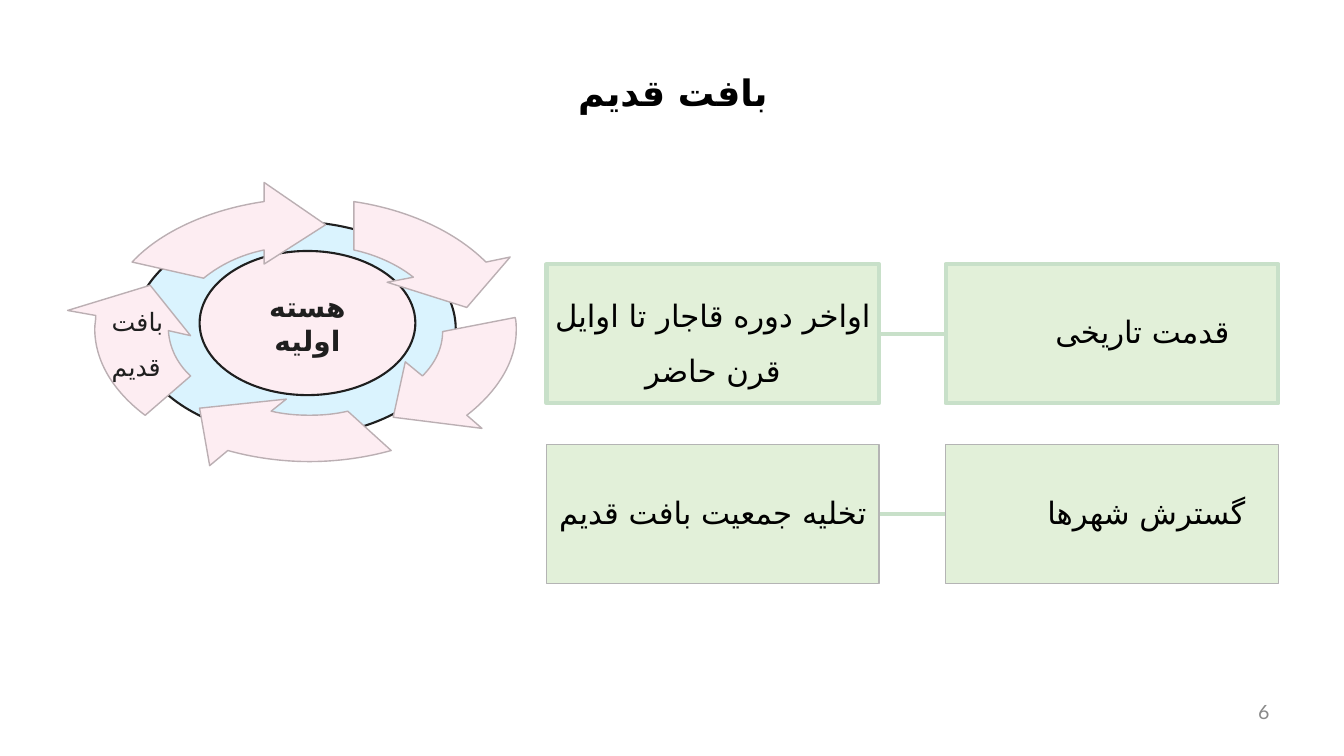
from dataclasses import dataclass

from lxml.etree import SubElement
from pptx import Presentation
from pptx.dml.color import RGBColor
from pptx.enum.shapes import MSO_CONNECTOR, MSO_SHAPE
from pptx.enum.text import MSO_ANCHOR, PP_ALIGN
from pptx.oxml.ns import qn
from pptx.util import Pt

PX = 9144


@dataclass(frozen=True)
class Theme:
    font: str = "Roboto"
    persian_font: str = "DejaVu Sans"
    number_font: str = "Lato"
    black: str = "000000"
    ink: str = "1F1F1F"
    gray: str = "898989"
    green: str = "E2F0D9"
    green_edge: str = "C8E0C9"
    plain_edge: str = "B4B4B4"
    pink: str = "FDEDF2"
    pink_edge: str = "BBAFB3"
    blue: str = "DAF3FE"
    title: int = 26
    card: int = 22
    core: int = 20
    ring: int = 18
    number: int = 14


theme = Theme()


def write(shape, text, size, color, font=theme.font, bold=False, align=PP_ALIGN.CENTER,
          rtl=True, spacing=1.0, after=0, anchor=MSO_ANCHOR.MIDDLE, wrap=True,
          insets=(10, 5, 10, 5)):
    frame = shape.text_frame
    frame.word_wrap = wrap
    frame.vertical_anchor = anchor
    frame.margin_left, frame.margin_top, frame.margin_right, frame.margin_bottom = (
        side * PX for side in insets)
    paragraph = frame.paragraphs[0]
    paragraph.text = text
    paragraph.alignment = align
    paragraph.line_spacing = spacing
    paragraph.space_after = Pt(after)
    if rtl:
        paragraph._p.get_or_add_pPr().set("rtl", "1")
    for run in paragraph.runs:
        run.font.size = Pt(size)
        run.font.bold = bold
        run.font.color.rgb = RGBColor.from_string(color)
        run.font.name = font
        SubElement(run._r.get_or_add_rPr(), qn("a:cs"), typeface=theme.persian_font)


def paint(shape, fill, edge, width):
    shape.shadow.inherit = False
    shape.fill.solid()
    shape.fill.fore_color.rgb = RGBColor.from_string(fill)
    shape.line.color.rgb = RGBColor.from_string(edge)
    shape.line.width = Pt(width)


presentation = Presentation()
presentation.slide_width = 1333 * PX
presentation.slide_height = 750 * PX
slide = presentation.slides.add_slide(presentation.slide_layouts[6])
shapes = slide.shapes

title = shapes.add_textbox(67 * PX, 65 * PX, 1201 * PX, 66 * PX)
write(title, "بافت قدیم", theme.title, theme.black, bold=True, spacing=0.9,
      anchor=MSO_ANCHOR.TOP, insets=(10, 10, 10, 10))

CARD_WIDTH, CARD_HEIGHT = 330, 138
CAUSE_LEFT, EFFECT_LEFT = 938, 542
rows = [
    (262, theme.green_edge, 3, "قدمت تاریخی", 62, "اواخر دوره قاجار تا اوایل قرن حاضر", 1.5),
    (441, theme.plain_edge, 1, "گسترش شهرها", 70, "تخلیه جمعیت بافت قدیم", 0.9),
]
for top, edge, width, cause_text, indent, effect_text, effect_spacing in rows:
    pair = []
    for left, text, inset, spacing in (
        (CAUSE_LEFT, cause_text, indent, 0.9),
        (EFFECT_LEFT, effect_text, 2, effect_spacing),
    ):
        card = shapes.add_shape(MSO_SHAPE.RECTANGLE, left * PX, top * PX,
                                CARD_WIDTH * PX, CARD_HEIGHT * PX)
        paint(card, theme.green, edge, width)
        write(card, text, theme.card, theme.black, spacing=spacing, after=8,
              insets=(inset, 2, 2, 2))
        pair.append(card)
    cause, effect = pair
    link = shapes.add_connector(MSO_CONNECTOR.STRAIGHT, 0, 0, 0, 0)
    link.begin_connect(cause, 1)
    link.end_connect(effect, 3)
    link.line.color.rgb = RGBColor.from_string(theme.green_edge)
    link.line.width = Pt(3)
    SubElement(link._element.spPr, qn("a:effectLst"))
    cause._element.addprevious(link._element)

page_number = shapes.add_textbox(969 * PX, 686 * PX, 300 * PX, 40 * PX)
write(page_number, "6", theme.number, theme.gray, font=theme.number_font,
      align=PP_ALIGN.RIGHT, rtl=False)

outskirts = shapes.add_shape(MSO_SHAPE.OVAL, 133 * PX, 220 * PX, 319 * PX, 213 * PX)
paint(outskirts, theme.blue, theme.ink, 1.5)
core = shapes.add_shape(MSO_SHAPE.OVAL, 198 * PX, 249 * PX, 214 * PX, 143 * PX)
paint(core, theme.pink, theme.ink, 1.5)
write(core, "هسته اولیه", theme.core, theme.ink, bold=True, after=7)

ring_arrows = [
    [(262, 181), (262, 200), (207, 208, 159, 230, 131, 260), (202, 276),
     (218, 263, 238, 253, 262, 248), (262, 262), (323, 223)],
    [(149, 283), (67, 308), (95, 313), (95, 318, 94, 322, 94, 326),
     (94, 358, 112, 388, 144, 412), (189, 373), (175, 360, 168, 344, 167, 328), (189, 333)],
    [(284, 396), (198, 405), (208, 462), (226, 447), (251, 454, 279, 458, 307, 458),
     (335, 458, 363, 454, 388, 447), (345, 408), (332, 411, 320, 412, 307, 412),
     (294, 412, 282, 411, 269, 408)],
    [(511, 315), (439, 329), (439, 345, 432, 360, 419, 373), (402, 359), (390, 414),
     (478, 425), (463, 412), (494, 388, 512, 358, 512, 328), (512, 323, 512, 319, 511, 315)],
    [(351, 200), (351, 248), (374, 253, 395, 263, 410, 275), (384, 280), (463, 305),
     (506, 255), (482, 260), (452, 230, 405, 208, 351, 200)],
]
for corners in ring_arrows:
    ends = [corner[-2:] for corner in corners]
    left, top = (min(axis) for axis in zip(*ends))
    builder = shapes.build_freeform(*ends[0], scale=PX)
    builder.add_line_segments(ends[1:], close=True)
    arrow = builder.convert_to_shape()
    paint(arrow, theme.pink, theme.pink_edge, 1)
    for edge, corner in zip(list(arrow._element.iter(qn("a:lnTo"))), corners[1:]):
        if len(corner) == 6:
            edge.tag = qn("a:cubicBezTo")
            edge.clear()
            for x, y in zip(corner[::2], corner[1::2]):
                SubElement(edge, qn("a:pt"), x=str(x - left), y=str(y - top))

ring_label = shapes.add_textbox(101 * PX, 284 * PX, 75 * PX, 97 * PX)
write(ring_label, "بافت\vقدیم", theme.ring, theme.ink, align=PP_ALIGN.LEFT, rtl=False,
      spacing=1.5, anchor=MSO_ANCHOR.TOP, wrap=False)

presentation.save("out.pptx")
